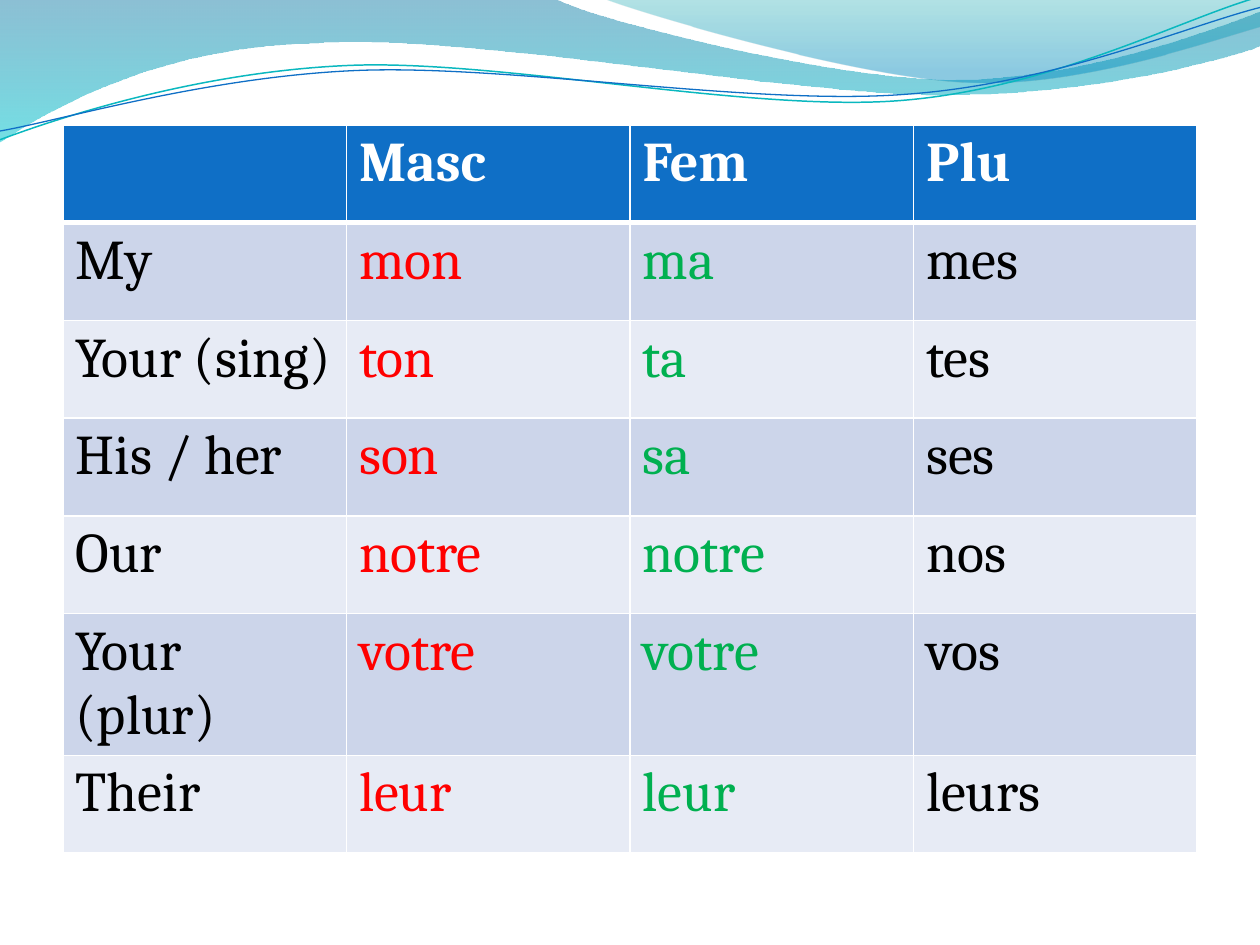
import dataclasses
import math

import pptx
import pptx.dml.color
import pptx.oxml.ns
import pptx.util
from lxml import etree

Cm = pptx.util.Cm
qn = pptx.oxml.ns.qn


@dataclasses.dataclass(frozen=True)
class Theme:
    """Colours, font and type size of the slide."""
    font: str = "Cambria"
    size: int = 32
    header: str = "0F6FC6"
    bands: tuple = ("CCD5EA", "E7EBF5")
    white: str = "FFFFFF"
    columns: tuple = ("000000", "FF0000", "00B050", "000000")
    back_wave: tuple = ((0, "0074A1", 45), (1, "00C6CF", 55))
    front_wave: tuple = ((0, "00A1A9", 30), (0.8, "008BBF", 45))
    teal_line: str = "0AB8BF"
    blue_line: str = "0F6FC6"


THEME = Theme()
TILT = -2.7

BACK_WAVE = [
    [(0, 0)], [(4.4, -0.01)],
    [(4.76, 0.17), (6.64, 0.63), (7.58, 0.63)],
    [(8.53, 0.63), (9.58, 0.26), (10, 0.09)],
    [(10.01, 0.36)],
    [(9.83, 0.44), (8.7, 0.76), (7.46, 0.75)],
    [(6.22, 0.75), (3.82, 0.28), (2.57, 0.34)],
    [(1.29, 0.36), (0.46, 0.83), (-0.01, 1.13)],
    [(0, 0)],
]
FRONT_WAVE = [
    [(4.79, -0.01)],
    [(5.09, 0.11), (6.82, 0.62), (7.69, 0.65)],
    [(8.56, 0.69), (9.61, 0.32), (10, 0.21)],
    [(10, 0)], [(4.79, -0.01)],
]
TEAL_LINE = [
    [(0, 1.11)],
    [(0.48, 0.93), (1.58, 0.57), (2.77, 0.52)],
    [(3.95, 0.47), (5.93, 0.89), (7.13, 0.8)],
    [(8.33, 0.71), (9.38, 0.15), (9.98, -0.02)],
]
BLUE_LINE = [
    [(0, 1.04)],
    [(0.47, 0.96), (1.64, 0.61), (2.83, 0.56)],
    [(4.03, 0.51), (5.97, 0.84), (7.17, 0.75)],
    [(8.36, 0.67), (9.41, 0.21), (10, 0.06)],
]
POSSESSIVES = [
    ("", "Masc", "Fem", "Plu"),
    ("My", "mon", "ma", "mes"),
    ("Your (sing)", "ton", "ta", "tes"),
    ("His / her", "son", "sa", "ses"),
    ("Our", "notre", "notre", "nos"),
    ("Your (plur)", "votre", "votre", "vos"),
    ("Their", "leur", "leur", "leurs"),
]


def rgb(value):
    """Return a colour object for a hex string."""
    return pptx.dml.color.RGBColor.from_string(value)


def turn(point, center, degrees):
    """Turn a point clockwise about a center."""
    dx, dy = point[0] - center[0], point[1] - center[1]
    cos, sin = math.cos(math.radians(degrees)), math.sin(math.radians(degrees))
    return center[0] + dx * cos - dy * sin, center[1] + dx * sin + dy * cos


def add_outline(s, box, segments, close, tilt=0):
    """Draw straight and cubic segments measured in tenths of the box width."""
    x, y, w, h = box
    center = (5, 5 * h / w)
    turned = [turn(point, center, -tilt) for segment in segments for point in segment]
    points = [(round(x + px * w / 10), round(y + py * w / 10)) for px, py in turned]
    builder = s.shapes.build_freeform(*points[0], scale=1.0)
    builder.add_line_segments(points[1:], close=close)
    sp = builder.convert_to_shape()
    lines = iter(list(sp._element.iter(qn("a:lnTo"))))
    for segment in segments[1:]:
        steps = [next(lines) for point in segment]
        if len(steps) == 3:
            curve = etree.Element(qn("a:cubicBezTo"))
            steps[0].addprevious(curve)
            for step in steps:
                curve.append(step[0])
                step.getparent().remove(step)
    sp.rotation = tilt
    sp.shadow.inherit = False
    return sp


def add_wave(s, box, segments, stops):
    """Add a closed wave with a translucent vertical gradient."""
    sp = add_outline(s, box, segments, True)
    sp.line.fill.background()
    sp.fill.gradient()
    sp.fill.gradient_angle = 270
    for stop, (position, color, opacity) in zip(sp.fill.gradient_stops, stops):
        stop.position = position
        stop.color.rgb = rgb(color)
    for node, (position, color, opacity) in zip(sp._element.iter(qn("a:srgbClr")), stops):
        etree.SubElement(node, qn("a:alpha"), val=str(opacity * 1000))


def add_swoosh(s, box, segments, color, width):
    """Add an open, slightly tilted curved line."""
    sp = add_outline(s, box, segments, False, TILT)
    sp.fill.background()
    sp.line.color.rgb = rgb(color)
    sp.line.width = pptx.util.Pt(width)


def add_banner(s, box):
    """Add the waves and lines along the top of the box."""
    add_wave(s, box, BACK_WAVE, THEME.back_wave)
    add_wave(s, box, FRONT_WAVE, THEME.front_wave)
    add_swoosh(s, box, TEAL_LINE, THEME.teal_line, 0.85)
    add_swoosh(s, box, BLUE_LINE, THEME.blue_line, 0.75)


def set_borders(cell, bottom):
    """Give a cell white borders, with the bottom width in points."""
    tcPr = cell._tc.get_or_add_tcPr()
    for side, width in (("L", 1), ("R", 1), ("T", 1), ("B", bottom)):
        ln = etree.SubElement(tcPr, qn(f"a:ln{side}"), w=str(pptx.util.Pt(width)))
        fill = etree.SubElement(ln, qn("a:solidFill"))
        etree.SubElement(fill, qn("a:srgbClr"), val=THEME.white)


def add_possessives(s, box):
    """Add the table of possessive adjectives."""
    frame = s.shapes.add_table(len(POSSESSIVES), len(POSSESSIVES[0]), *box)
    table = frame.table
    for row in table.rows:
        row.height = Cm(1.97)
    frame.height = box[3]
    for i, words in enumerate(POSSESSIVES):
        header = i == 0
        for j, word in enumerate(words):
            cell = table.cell(i, j)
            set_borders(cell, 3 if header else 1)
            cell.fill.solid()
            cell.fill.fore_color.rgb = rgb(THEME.header if header else THEME.bands[(i - 1) % 2])
            p = cell.text_frame.paragraphs[0]
            if word:
                p.text = word
            for r in p.runs:
                r.font.name = THEME.font
                r.font.size = pptx.util.Pt(THEME.size)
                r.font.bold = header
                r.font.color.rgb = rgb(THEME.white if header else THEME.columns[j])


def main():
    """Build the slide and save it."""
    prs = pptx.Presentation()
    prs.slide_width, prs.slide_height = Cm(25.4), Cm(19.05)
    s = prs.slides.add_slide(prs.slide_layouts[6])
    add_banner(s, (0, 0, prs.slide_width, Cm(2.9)))
    add_possessives(s, (Cm(1.27), Cm(2.52), Cm(22.86), Cm(15.77)))
    prs.save("out.pptx")


if __name__ == "__main__":
    main()
